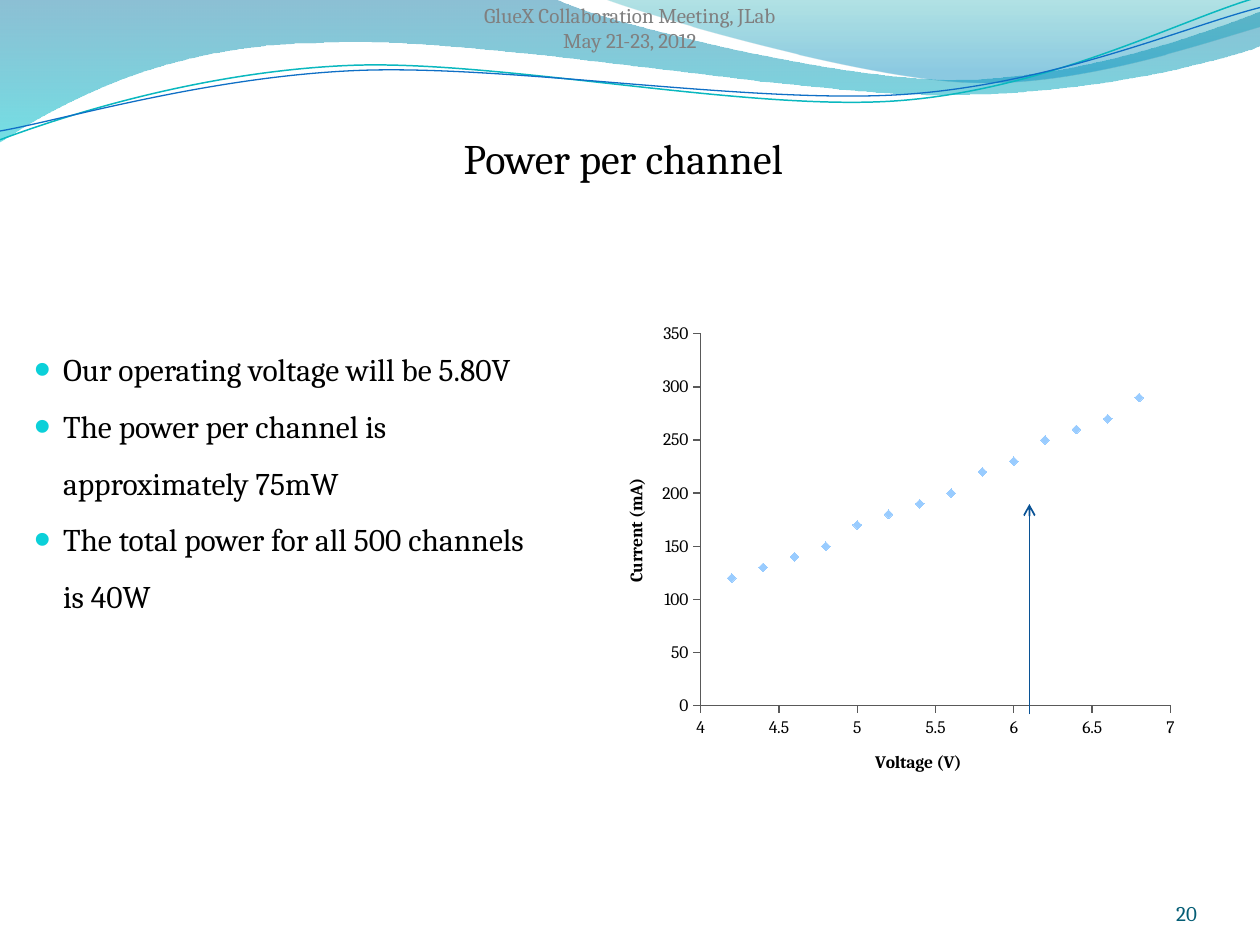
from lxml import etree
from pptx import Presentation, util as u
from pptx.chart.data import XyChartData
from pptx.dml.color import RGBColor
from pptx.enum import chart as ch, shapes, text
from pptx.oxml import parse_xml
from pptx.oxml.ns import nsdecls, qn

# Content
TITLE = "Power per channel"
POINTS = [
    "Our operating voltage will be 5.80V",
    "The power per channel is approximately 75mW",
    "The total power for all 500 channels is 40W",
]
HEADER = ["GlueX Collaboration Meeting, JLab", "May 21-23, 2012"]
PAGE = "20"
CURRENTS = [120, 130, 140, 150, 170, 180, 190, 200, 220, 230, 250, 260, 270, 290]
VOLTAGES = [round(4.2 + 0.2 * i, 1) for i in range(len(CURRENTS))]
CHART_BOX = (4.75, 2.5, 4.67, 3.83)
FONT = "Cambria"
COLORS = {
    "text": "000000", "header": "808080", "page": "045D75", "bullet": "0BD0D9",
    "marker": "99CCFF", "axis": "595959", "arrow": "095295",
    "teal_line": "0AB8BF", "blue_line": "0F6FC6",
}

# Outlines: a start point, then 2-number lines and 6-number Bezier curves
BANDS = [
    ([(0, -0.01), (4.4, -0.01), (4.76, 0.17, 6.64, 0.63, 7.58, 0.63),
      (8.53, 0.63, 9.58, 0.26, 10, 0.09), (10.01, 0.36),
      (9.83, 0.44, 8.7, 0.76, 7.46, 0.75), (6.22, 0.75, 3.82, 0.28, 2.57, 0.34),
      (1.29, 0.35, 0.46, 0.83, -0.01, 1.13)],
     [(0, "0074A1", 45), (100, "00C6CF", 55)]),
    ([(4.79, -0.01), (5.09, 0.11, 6.82, 0.62, 7.69, 0.65),
      (8.56, 0.69, 9.61, 0.32, 10, 0.21), (10, 0)],
     [(0, "00A1A9", 30), (80, "008BBF", 45)]),
]
WAVES = [
    ([(0, 1.11), (0.48, 0.93, 1.58, 0.57, 2.77, 0.52),
      (3.95, 0.47, 5.93, 0.89, 7.13, 0.8), (8.33, 0.71, 9.38, 0.15, 9.98, -0.02)],
     "teal_line", 0.85),
    ([(0, 1.04), (0.47, 0.96, 1.64, 0.61, 2.83, 0.56),
      (4.03, 0.51, 5.97, 0.83, 7.17, 0.75), (8.36, 0.67, 9.41, 0.21, 10, 0.06)],
     "blue_line", 0.75),
]


def rgb(name):
    return RGBColor.from_string(COLORS[name])


def place(shape, *box):
    shape.left, shape.top, shape.width, shape.height = map(u.Inches, box)


def draw(outline, close):
    """Build a freeform through every point, then bend the triples into curves."""
    points = [(u.Inches(segment[i]), u.Inches(segment[i + 1]))
              for segment in outline for i in range(0, len(segment), 2)]
    builder = slide.shapes.build_freeform(*points[0])
    builder.add_line_segments(points[1:], close=close)
    shape = builder.convert_to_shape()
    shape.shadow.inherit = False
    strokes = iter(list(shape._element.iter(qn("a:lnTo"))))
    for segment in outline[1:]:
        first = next(strokes)
        if len(segment) == 6:
            first.tag = qn("a:cubicBezTo")
            for _ in range(2):
                extra = next(strokes)
                first.append(extra[0])
                extra.getparent().remove(extra)
    return shape


def write(shape, lines, size, color, align=text.PP_ALIGN.LEFT,
          anchor=text.MSO_ANCHOR.TOP, inset=None):
    frame = shape.text_frame
    frame.word_wrap = True
    frame.auto_size = text.MSO_AUTO_SIZE.NONE
    frame.vertical_anchor = anchor
    if inset is not None:
        frame.margin_left = frame.margin_right = u.Inches(inset)
        frame.margin_top = frame.margin_bottom = u.Inches(inset)
    frame.text = "\n".join(lines)
    for paragraph in frame.paragraphs:
        paragraph.alignment = align
        paragraph.space_before = u.Pt(0)
        font = paragraph.runs[0].font
        font.name, font.size, font.color.rgb = FONT, u.Pt(size), rgb(color)
    return frame.paragraphs


def set_layout(parent, index, *inches):
    """Fix the place (and size) of a chart part, given in inches."""
    for old in parent.findall(qn("c:layout")):
        parent.remove(old)
    parts = '<c:layoutTarget val="inner"/>' if len(inches) == 4 else ""
    parts += '<c:xMode val="edge"/><c:yMode val="edge"/>'
    for tag, value, whole in zip("xywh", inches, CHART_BOX[2:] * 2):
        parts += f'<c:{tag} val="{value / whole}"/>'
    parent.insert(index, parse_xml(
        f'<c:layout {nsdecls("c")}><c:manualLayout>{parts}</c:manualLayout></c:layout>'))


prs = Presentation()
prs.slide_width, prs.slide_height = u.Inches(10), u.Inches(7.5)
slide = prs.slides.add_slide(prs.slide_layouts[1])

# Wavy banner
for outline, stops in BANDS:
    band = draw(outline, True)
    band.line.fill.background()
    gradient = "".join(
        f'<a:gs pos="{pos * 1000}"><a:srgbClr val="{color}">'
        f'<a:alpha val="{alpha * 1000}"/></a:srgbClr></a:gs>'
        for pos, color, alpha in stops)
    band.fill.background()
    properties = band._element.spPr
    properties.replace(properties.find(qn("a:noFill")), parse_xml(
        f'<a:gradFill {nsdecls("a")}><a:gsLst>{gradient}</a:gsLst>'
        '<a:lin ang="5400000" scaled="0"/></a:gradFill>'))
for outline, color, width in WAVES:
    wave = draw(outline, False)
    wave.fill.background()
    wave.line.color.rgb, wave.line.width = rgb(color), u.Pt(width)

# Title and bullets
title, body = slide.shapes.title, slide.placeholders[1]
place(title, 3.58, 1, 3, 0.51)
write(title, [TITLE], 24, "text")
place(body, 0.17, 2.58, 4.25, 2.37)
for point in write(body, POINTS, 18, "text"):
    point.line_spacing = 1.5
    ppr = point._p.get_or_add_pPr()
    ppr.set("marL", str(u.Inches(0.23)))
    ppr.set("indent", str(-u.Inches(0.23)))
    color = etree.SubElement(ppr, qn("a:buClr"))
    etree.SubElement(color, qn("a:srgbClr"), val=COLORS["bullet"])
    etree.SubElement(ppr, qn("a:buSzPct"), val="150000")
    etree.SubElement(ppr, qn("a:buChar"), char="•")

# Current against voltage
data = XyChartData()
series = data.add_series("Series 1")
for voltage, current in zip(VOLTAGES, CURRENTS):
    series.add_data_point(voltage, current)
chart = slide.shapes.add_chart(
    ch.XL_CHART_TYPE.XY_SCATTER, *map(u.Inches, CHART_BOX), data).chart
chart.has_legend = chart.has_title = False
chart.font.name, chart.font.size, chart.font.color.rgb = FONT, u.Pt(10), rgb("text")
plot = chart.plots[0]
plot.vary_by_categories = False
dots = plot.series[0]
dots.smooth = False
dots.format.line.fill.background()
dots.marker.style, dots.marker.size = ch.XL_MARKER_STYLE.DIAMOND, 5
dots.marker.format.fill.solid()
dots.marker.format.fill.fore_color.rgb = rgb("marker")
dots.marker.format.line.fill.background()
AXES = [
    (chart.category_axis, "Voltage (V)", 4, 7, 0.5, (2.17, 3.43)),
    (chart.value_axis, "Current (mA)", 0, 350, 50, (0.18, 1.27)),
]
for axis, label, low, high, step, corner in AXES:
    axis.minimum_scale, axis.maximum_scale, axis.major_unit = low, high, step
    axis.has_major_gridlines = False
    axis.major_tick_mark = ch.XL_TICK_MARK.OUTSIDE
    axis.tick_labels.number_format = "General"
    axis.tick_labels.number_format_is_linked = False
    axis.format.line.color.rgb, axis.format.line.width = rgb("axis"), u.Pt(0.75)
    axis.axis_title.text_frame.text = label
    font = axis.axis_title.text_frame.paragraphs[0].runs[0].font
    font.name, font.size, font.bold, font.color.rgb = FONT, u.Pt(10), True, rgb("text")
    set_layout(axis.axis_title._element, 1, *corner)
set_layout(chart._chartSpace.chart.plotArea, 0, 0.81, 0.15, 3.73, 2.95)

# Arrow at the operating point
arrow = slide.shapes.add_connector(
    shapes.MSO_CONNECTOR.STRAIGHT, *map(u.Inches, (8.17, 5.67, 8.17, 4)))
arrow.line.color.rgb, arrow.line.width = rgb("arrow"), u.Pt(1)
etree.SubElement(arrow.line._get_or_add_ln(), qn("a:tailEnd"), type="arrow")
etree.SubElement(arrow._element.spPr, qn("a:effectLst"))

# Page number and meeting header
LABELS = [
    ([PAGE], (8.67, 6.95, 0.83, 0.4), "page", text.PP_ALIGN.RIGHT),
    (HEADER, (0, 0, 10, 0.42), "header", text.PP_ALIGN.CENTER),
]
for lines, box, color, align in LABELS:
    label = slide.shapes.add_textbox(*map(u.Inches, box))
    write(label, lines, 12, color, align, text.MSO_ANCHOR.BOTTOM, inset=0)

prs.save("out.pptx")
